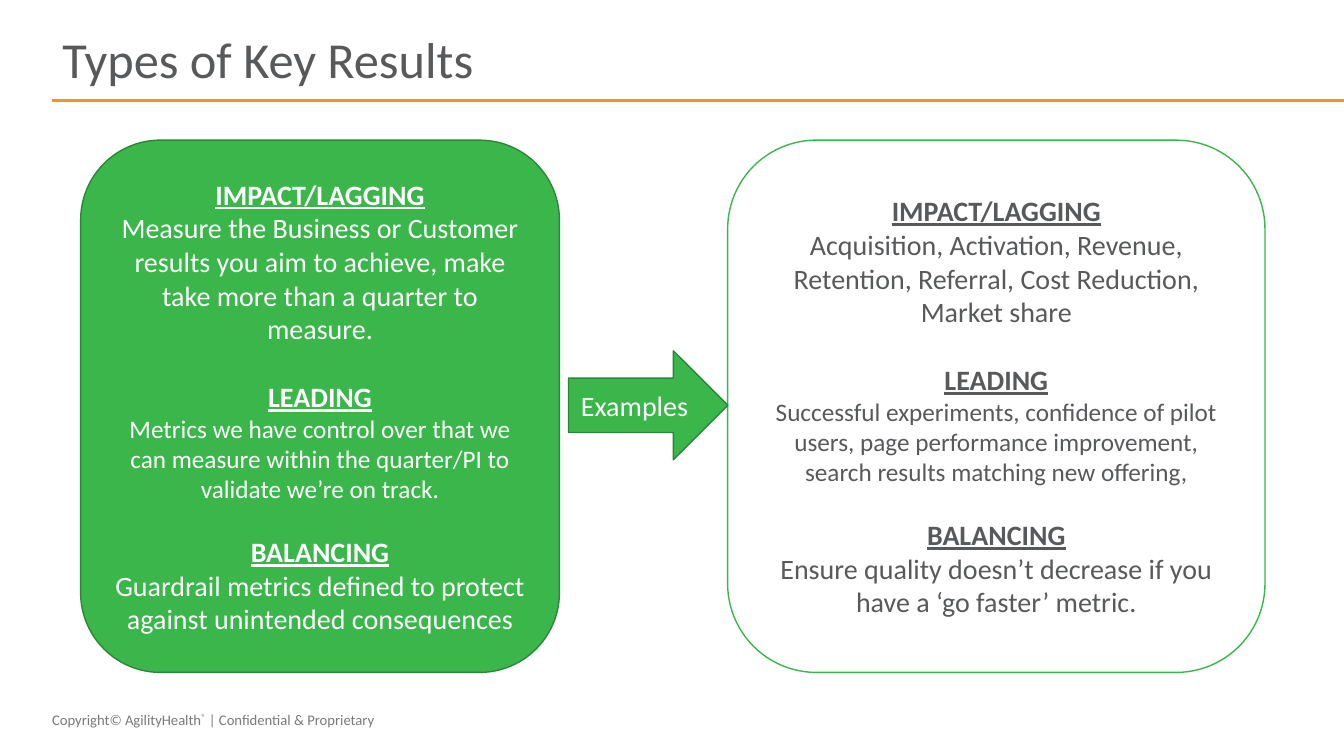
"""Build the slide "Types of Key Results"."""
from lxml import etree
from pptx import Presentation
from pptx.dml.color import RGBColor
from pptx.enum.shapes import MSO_CONNECTOR, MSO_SHAPE as Preset
from pptx.enum.text import MSO_ANCHOR as Anchor, PP_ALIGN as Align
from pptx.oxml.ns import qn
from pptx.util import Pt

GREEN, DARK_GREEN, WHITE, GREY = "3AB64B", "2B8737", "FFFFFF", "58595B"


def rgb(value):
    return RGBColor.from_string(value)


def add_run(paragraph, text, size, color, heading=False):
    run = paragraph.add_run()
    run.text = text
    run.font.name = "Calibri"
    run.font.size = Pt(size)
    run.font.color.rgb = rgb(color)
    if heading:
        run.font.bold = run.font.underline = True
    return run


deck = Presentation()
deck.slide_width, deck.slide_height = Pt(960), Pt(540)
slide = deck.slides.add_slide(deck.slide_layouts[6])
shapes = slide.shapes

footer = shapes.add_textbox(Pt(30.2), Pt(504), Pt(324), Pt(20.2)).text_frame
footer.word_wrap = True
copyright_line = footer.paragraphs[0]
add_run(copyright_line, "Copyright© AgilityHealth", 10.5, "7A7A7A")
registered = add_run(copyright_line, "®", 10.5, "7A7A7A")
registered.font._element.set("baseline", "30000")
add_run(copyright_line, " | Confidential & Proprietary", 10.5, "7A7A7A")

title_rule = shapes.add_connector(MSO_CONNECTOR.STRAIGHT, Pt(37.4), Pt(72), Pt(960), Pt(72))
title_rule.line.color.rgb = rgb("F7941C")
title_rule.line.width = Pt(2)
etree.SubElement(title_rule._element.spPr, qn("a:effectLst"))

title = shapes.add_textbox(Pt(37.4), Pt(19.4), Pt(884.9), Pt(50.4)).text_frame
title.word_wrap = True
title.vertical_anchor = Anchor.MIDDLE
title.paragraphs[0].line_spacing = 0.9
add_run(title.paragraphs[0], "Types of Key Results", 36, GREY)

definitions = [
    ("IMPACT/LAGGING", "Measure the Business or Customer results you aim to achieve, "
     "make take more than a quarter to measure."),
    ("LEADING", "Metrics we have control over that we can measure within the "
     "quarter/PI to validate we’re on track."),
    ("BALANCING", "Guardrail metrics defined to protect against unintended consequences"),
]
examples = [
    ("IMPACT/LAGGING", "Acquisition, Activation, Revenue, Retention, Referral, "
     "Cost Reduction, Market share"),
    ("LEADING", "Successful experiments, confidence of pilot users, page performance "
     "improvement, search results matching new offering,"),
    ("BALANCING", "Ensure quality doesn’t decrease if you have a ‘go faster’ metric."),
]
body_sizes = [20, 18, 20]
gaps_above = [0, 24.4, 22]

blocks = [
    (Preset.ROUNDED_RECTANGLE, 57.6, 100.1, 342, 380.2, GREEN, DARK_GREEN, WHITE, definitions),
    (Preset.ROUNDED_RECTANGLE, 519.8, 100.1, 383.8, 380.2, WHITE, GREEN, GREY, examples),
    (Preset.RIGHT_ARROW, 406.1, 250.6, 113.8, 77.8, GREEN, DARK_GREEN, WHITE, []),
]
for preset, left, top, width, height, fill, outline, ink, results in blocks:
    block = shapes.add_shape(preset, Pt(left), Pt(top), Pt(width), Pt(height))
    block.shadow.inherit = False
    block.fill.solid()
    block.fill.fore_color.rgb = rgb(fill)
    block.line.color.rgb = rgb(outline)
    block.line.width = Pt(1)
    frame = block.text_frame
    frame.word_wrap = True
    frame.vertical_anchor = Anchor.MIDDLE
    paragraph = frame.paragraphs[0]
    paragraph.alignment = Align.CENTER
    if not results:
        add_run(paragraph, "Examples", 20, ink)
    for (kind, meaning), size, gap in zip(results, body_sizes, gaps_above):
        if gap:
            paragraph = frame.add_paragraph()
            paragraph.alignment = Align.CENTER
            paragraph.space_before = Pt(gap)
        add_run(paragraph, kind, 20, ink, heading=True)
        body = frame.add_paragraph()
        body.alignment = Align.CENTER
        add_run(body, meaning, size, ink)

deck.save("out.pptx")
